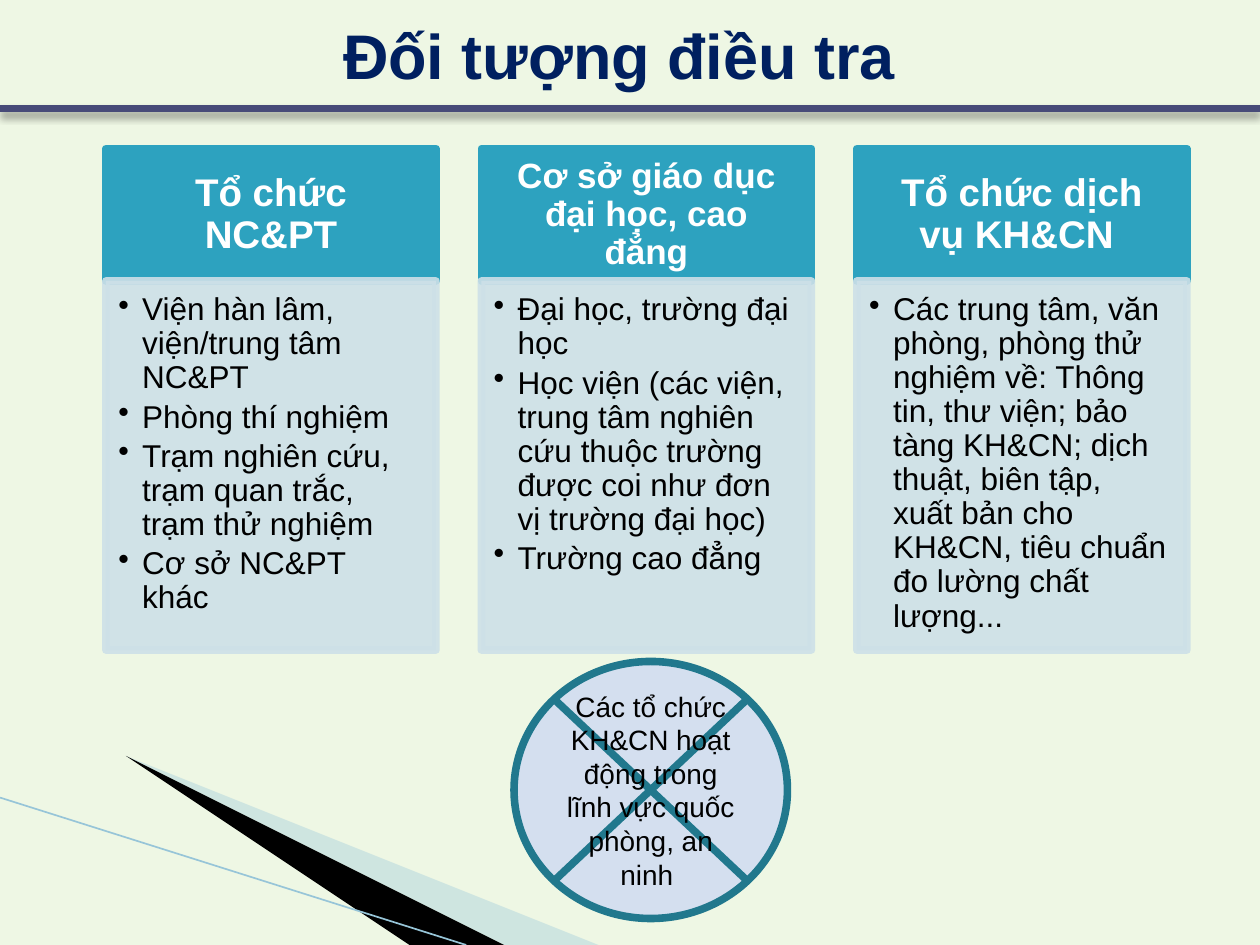
from lxml import etree
from pptx import Presentation, util as u
from pptx.dml.color import RGBColor
from pptx.enum import shapes, text
from pptx.oxml.ns import qn

CREAM = RGBColor(0xEE, 0xF7, 0xE4)
NAVY = RGBColor(0x00, 0x20, 0x60)
RULE = RGBColor(0x47, 0x4B, 0x78)
TEAL = RGBColor(0x2D, 0xA2, 0xBF)
DARK = RGBColor(0x21, 0x78, 0x8D)
PALE = RGBColor(0xCD, 0xE0, 0xE8)
LILAC = RGBColor(0xD4, 0xDF, 0xEF)
MIST = RGBColor(0xA0, 0xCB, 0xDC)
SKY = RGBColor(0x97, 0xC5, 0xD8)
BLACK = RGBColor(0, 0, 0)
WHITE = RGBColor(255, 255, 255)
EDGE = u.Pt(4.33)

COLS = [
    ("Tổ chức NC&PT", 22, [
        "Viện hàn lâm, viện/trung tâm NC&PT",
        "Phòng thí nghiệm",
        "Trạm nghiên cứu, trạm quan trắc, trạm thử nghiệm",
        "Cơ sở NC&PT khác"]),
    ("Cơ sở giáo dục đại học, cao đẳng", 20, [
        "Đại học, trường đại học",
        "Học viện (các viện, trung tâm nghiên cứu thuộc trường "
        "được coi như đơn vị trường đại học)",
        "Trường cao đẳng"]),
    ("Tổ chức dịch vụ KH&CN ", 22, [
        "Các trung tâm, văn phòng, phòng thử nghiệm về: Thông tin, "
        "thư viện; bảo tàng KH&CN; dịch thuật, biên tập, xuất bản cho "
        "KH&CN, tiêu chuẩn đo lường chất lượng..."]),
]


def paint(shape, fill, line=None, alpha=100):
    """Fill and outline a shape, without shadow."""
    shape.shadow.inherit = False
    shape.fill.solid()
    shape.fill.fore_color.rgb = fill
    if line is None:
        shape.line.fill.background()
    else:
        shape.line.color.rgb = line
        shape.line.width = EDGE
    if alpha < 100:
        for clr in shape._element.spPr.iter(qn("a:srgbClr")):
            etree.SubElement(clr, qn("a:alpha"), val=str(alpha * 1000))


def write(para, words, size, color, bold=False, align=text.PP_ALIGN.CENTER):
    """Set a paragraph's words and look."""
    para.text = words
    para.alignment = align
    font = para.font
    font.name, font.size, font.bold = "Arial", u.Pt(size), bold
    font.color.rgb = color


prs = Presentation()
prs.slide_width, prs.slide_height = u.Inches(10), u.Inches(7.5)
slide = prs.slides.add_slide(prs.slide_layouts[5])
slide.background.fill.solid()
slide.background.fill.fore_color.rgb = CREAM
tree = slide.shapes

# Corner wedges and thin line
for pts, color, alpha in [
    ([(0.55, 6.5), (5.95, 7.5), (4.56, 7.5)], MIST, 40),
    ([(0.53, 6.49), (4.57, 7.5), (3.72, 7.5)], BLACK, 100),
]:
    pen = tree.build_freeform(*pts[0], scale=u.Inches(1))
    pen.add_line_segments(pts[1:], close=True)
    paint(pen.convert_to_shape(), color, alpha=alpha)
# Thin line and title rule
for x1, y1, x2, y2, color, width in [
    (0, 6.33, 3.7, 7.5, SKY, u.Pt(0.95)),
    (0, 0.86, 10, 0.86, RULE, EDGE),
]:
    bar = tree.add_connector(shapes.MSO_CONNECTOR.STRAIGHT,
                             *map(u.Inches, (x1, y1, x2, y2)))
    bar.line.color.rgb = color
    bar.line.width = width
    glow = etree.SubElement(bar._element.spPr, qn("a:effectLst"))

# Soft shadow below the title rule, the last line drawn
cast = etree.SubElement(glow, qn("a:outerShdw"), blurRad=str(u.Pt(4)),
                        dist=str(u.Pt(3)), dir="5400000", rotWithShape="0")
ink = etree.SubElement(cast, qn("a:srgbClr"), val=str(BLACK))
etree.SubElement(ink, qn("a:alpha"), val="35000")

# Title
title = tree.title
title.left, title.top = 0, 0
title.width, title.height = u.Inches(9.83), u.Inches(0.86)
title.text_frame.vertical_anchor = text.MSO_ANCHOR.MIDDLE
write(title.text_frame.paragraphs[0], "Đối tượng điều tra", 36, NAVY, True)

# Three columns: heading over a bulleted list
LEFT, STEP, WIDE = 0.84, 2.98, 2.62
TOP, HEAD, BODY = 1.18, 1.05, 2.93
for i, (name, size, items) in enumerate(COLS):
    x = LEFT + i * STEP
    head, body = [
        tree.add_shape(shapes.MSO_SHAPE.RECTANGLE,
                       *map(u.Inches, (x, y, WIDE, tall)))
        for y, tall in ((TOP, HEAD), (TOP + HEAD, BODY))]
    paint(head, TEAL, TEAL)
    paint(body, PALE, PALE, 90)
    for box, pads, anchor in [
        (head, (0.17, 0.1, 0.17, 0.1), text.MSO_ANCHOR.MIDDLE),
        (body, (0.1, 0.1, 0.14, 0.16), text.MSO_ANCHOR.TOP),
    ]:
        frame = box.text_frame
        frame.word_wrap = True
        frame.vertical_anchor = anchor
        (frame.margin_left, frame.margin_top, frame.margin_right,
         frame.margin_bottom) = map(u.Inches, pads)
    para = head.text_frame.paragraphs[0]
    para.line_spacing = 0.9
    write(para, name, size, WHITE, True)
    frame = body.text_frame
    for j, item in enumerate(items):
        para = frame.add_paragraph() if j else frame.paragraphs[0]
        para.line_spacing = 0.9
        para.space_after = u.Pt(3)
        props = para._p.get_or_add_pPr()
        props.set("marL", str(u.Inches(0.19)))
        props.set("indent", str(-u.Inches(0.19)))
        etree.SubElement(props, qn("a:buChar"), char="•")
        write(para, item, 18, BLACK, align=text.PP_ALIGN.LEFT)

# Crossed-out circle: what the survey leaves out
cross = tree.add_shape(shapes.MSO_SHAPE.FLOWCHART_SUMMING_JUNCTION,
                       *map(u.Inches, (4.08, 5.25, 2.17, 2.04)))
paint(cross, LILAC, DARK)
cross.text_frame.word_wrap = True
cross.text_frame.vertical_anchor = text.MSO_ANCHOR.MIDDLE
write(cross.text_frame.paragraphs[0],
      "Các tổ chức KH&CN hoạt động trong lĩnh vực quốc phòng, an ninh ",
      16, BLACK)

prs.save("out.pptx")
